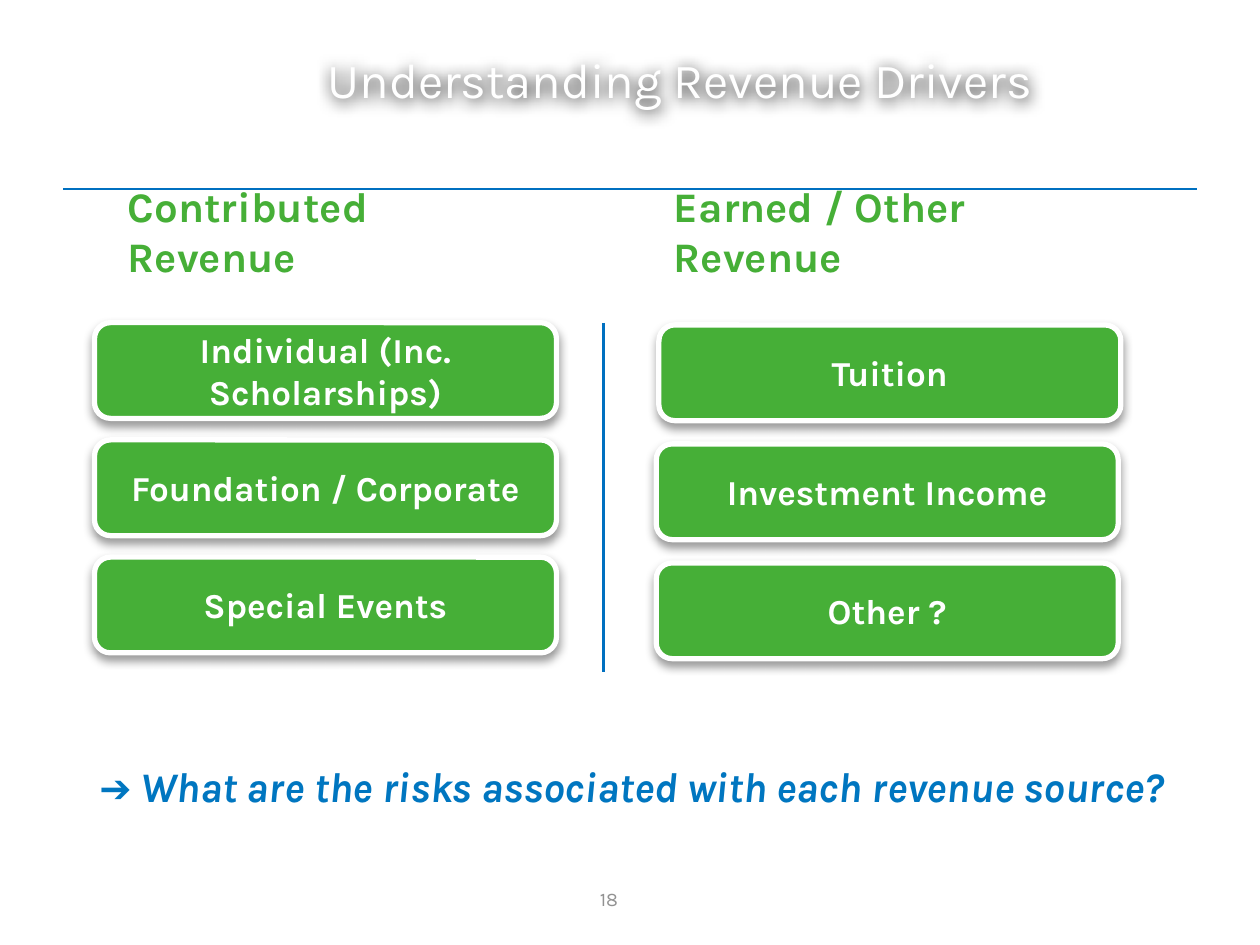
"""Build the slide on contributed and earned revenue drivers."""
from lxml import etree
from pptx import Presentation
from pptx.dml.color import RGBColor
from pptx.enum import shapes, text
from pptx.oxml import ns
from pptx.util import Pt

FONT = "Karla"
GREEN, BLUE, WHITE, GREY = "46AF37", "0070C0", "FFFFFF", "929292"
QUESTION_BLUE = "0076C0"
LEFT, CENTER = text.PP_ALIGN.LEFT, text.PP_ALIGN.CENTER
TOP, MIDDLE, BOTTOM = (
    text.MSO_ANCHOR.TOP, text.MSO_ANCHOR.MIDDLE, text.MSO_ANCHOR.BOTTOM)


def rgb(color):
    return RGBColor.from_string(color)


class RevenueSlide:
    def __init__(self, deck):
        self.slide = deck.slides.add_slide(deck.slide_layouts[5])
        self.shapes = self.slide.shapes

    def fill_text(self, shape, runs, size, color, bold=False, italic=False,
                  align=LEFT, anchor=MIDDLE):
        frame = shape.text_frame
        frame.word_wrap = True
        frame.auto_size = text.MSO_AUTO_SIZE.NONE
        frame.vertical_anchor = anchor
        paragraph = frame.paragraphs[0]
        paragraph.alignment = align
        for words in runs:
            paragraph.add_run().text = words
        font = paragraph.font
        font.name, font.size = FONT, Pt(size)
        font.bold, font.italic = bold, italic
        font.color.rgb = rgb(color)
        return paragraph

    def shade(self, shape, opacity, blur, distance):
        shape.shadow.inherit = False
        effects = shape._element.spPr.find(ns.qn("a:effectLst"))
        shadow = etree.SubElement(
            effects, ns.qn("a:outerShdw"), blurRad=str(Pt(blur)),
            dist=str(Pt(distance)), dir="5400000", rotWithShape="0")
        tint = etree.SubElement(shadow, ns.qn("a:srgbClr"), val="000000")
        etree.SubElement(tint, ns.qn("a:alpha"), val=str(opacity * 1000))

    def title(self, words, left, top, width, height):
        title = self.shapes.title
        title.left, title.top = Pt(left), Pt(top)
        title.width, title.height = Pt(width), Pt(height)
        title.fill.background()
        self.shade(title, 100, 8.5, 1)
        self.fill_text(title, [words], 28, WHITE)

    def label(self, runs, left, top, width, height, size, color, **style):
        box = self.shapes.add_textbox(
            Pt(left), Pt(top), Pt(width), Pt(height))
        return self.fill_text(box, runs, size, color, **style)

    def rule(self, x1, y1, x2, y2):
        rule = self.shapes.add_connector(
            shapes.MSO_CONNECTOR.STRAIGHT, Pt(x1), Pt(y1), Pt(x2), Pt(y2))
        rule.line.color.rgb = rgb(BLUE)
        rule.line.width = Pt(1.5)
        etree.SubElement(rule._element.spPr, ns.qn("a:effectLst"))

    def driver(self, words, left, top):
        button = self.shapes.add_shape(
            shapes.MSO_SHAPE.ROUNDED_RECTANGLE,
            Pt(left), Pt(top), Pt(264), Pt(54.7))
        button.fill.solid()
        button.fill.fore_color.rgb = rgb(GREEN)
        button.line.color.rgb = rgb(WHITE)
        button.line.width = Pt(3)
        self.shade(button, 40, 5.2, 3)
        self.fill_text(button, [words], 20, WHITE, bold=True, align=CENTER)

    def question(self, arrow, words):
        paragraph = self.label(
            [arrow, words], 49.7, 431.3, 632.2, 58.3, 24, QUESTION_BLUE,
            bold=True, italic=True, anchor=TOP)
        indent = Pt(13.7)
        properties = paragraph._p.get_or_add_pPr()
        properties.set("marL", str(indent))
        properties.set("indent", str(-indent))
        paragraph.runs[0].font.size = Pt(22)


def main():
    deck = Presentation()
    deck.slide_width, deck.slide_height = Pt(720), Pt(540)
    page = RevenueSlide(deck)
    page.rule(36, 108, 684, 108)
    page.label(["18"], 264, 499, 168, 28.8, 11, GREY, align=CENTER)
    page.title("Understanding Revenue Drivers", 180, 10.8, 504, 68.4)
    for heading, left, width in (("Contributed Revenue", 66, 240),
                                 ("Earned / Other Revenue", 378, 270)):
        page.label([heading], left, 113.8, width, 50.4, 24, GREEN,
                   bold=True, anchor=BOTTOM)
    page.rule(344.7, 184.5, 344.7, 384)
    contributed = ("Individual (Inc. Scholarships)",
                   "Foundation / Corporate", "Special Events")
    earned = (("Tuition", 376.5), ("Investment Income", 375),
              ("Other ?", 375))
    for row, source in enumerate(contributed):
        page.driver(source, 54, 184.4 + 67 * row)
    for row, (source, left) in enumerate(earned):
        page.driver(source, left, 185.7 + 68 * row)
    page.question(
        "➔ ", "What are the risks associated with each revenue source?")
    deck.save("out.pptx")


if __name__ == "__main__":
    main()
